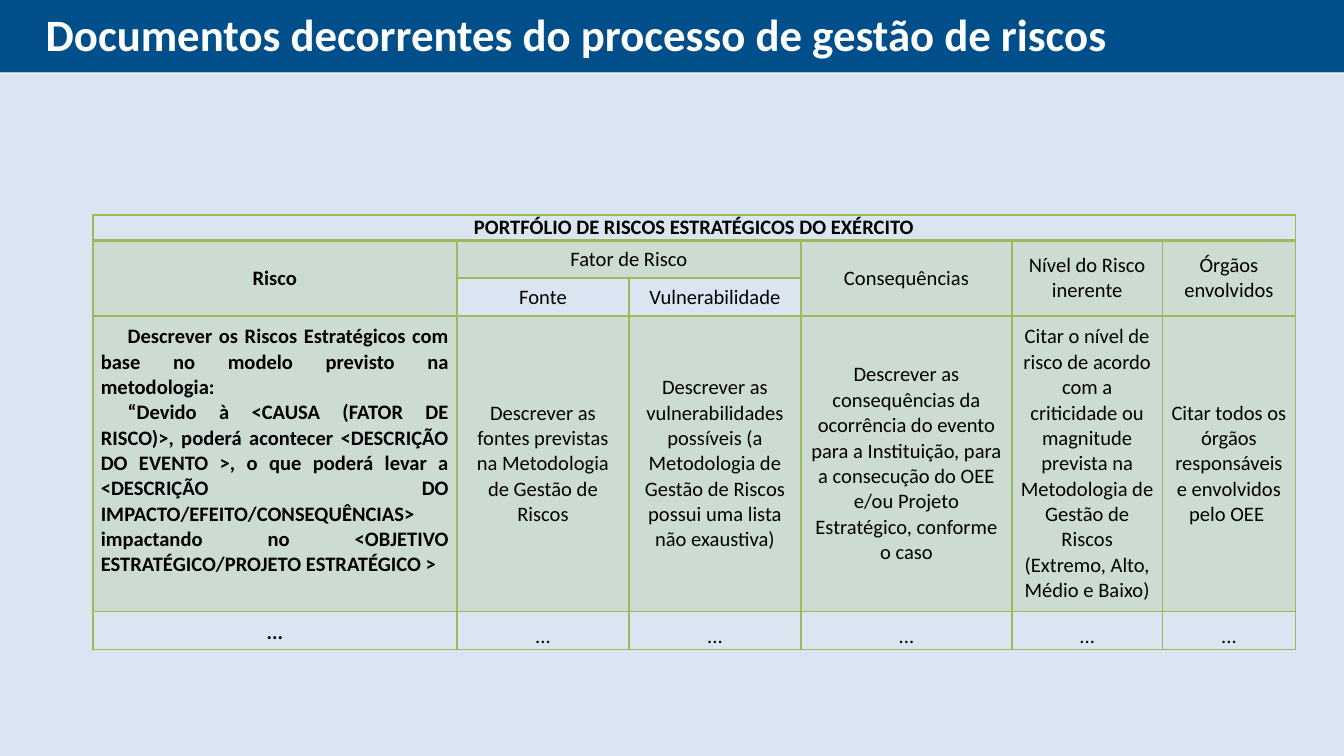
"""Build the slide with the strategic risk portfolio table."""
from dataclasses import dataclass

from pptx import Presentation
from pptx.dml.color import RGBColor
from pptx.enum.shapes import MSO_SHAPE
from pptx.enum.text import MSO_ANCHOR, MSO_AUTO_SIZE, PP_ALIGN
from pptx.oxml import parse_xml
from pptx.oxml.ns import nsdecls, qn
from pptx.util import Inches, Pt

NAVY = RGBColor(0x00, 0x4F, 0x8A)
PALE = RGBColor(0xDA, 0xE5, 0xF1)
GREEN = RGBColor(0x9B, 0xBB, 0x59)
WHITE = RGBColor(0xFF, 0xFF, 0xFF)
BLACK = RGBColor(0x00, 0x00, 0x00)
FONT = "Calibri"
WIDTH = 10
HEIGHT = WIDTH * 9 / 16
PALE_TOP = 0.55
COLS = (2.71, 1.28, 1.28, 1.57, 1.12, 0.99)
ROWS = (0.19, 0.28, 0.28, 2.2, 0.28)


@dataclass(frozen=True)
class Entry:
    row: int
    col: int
    text: str
    rows: int = 1
    cols: int = 1
    tinted: bool = True
    bold: bool = False
    align: PP_ALIGN = PP_ALIGN.CENTER
    spacing: float = 1.0
    indent: float = 0
    bottom: float = 0
    anchor: MSO_ANCHOR = MSO_ANCHOR.MIDDLE


DESCRIPTIONS = (
    "Descrever as fontes previstas na Metodologia de Gestão de Riscos",
    "Descrever as vulnerabilidades possíveis (a Metodologia de Gestão de Riscos "
    "possui uma lista não exaustiva)",
    "Descrever as consequências da ocorrência do evento para a Instituição, para a "
    "consecução do OEE e/ou Projeto Estratégico, conforme o caso",
    "Citar o nível de risco de acordo com a criticidade ou magnitude prevista na "
    "Metodologia de Gestão de Riscos (Extremo, Alto, Médio e Baixo)",
    "Citar todos os órgãos responsáveis e envolvidos pelo OEE ",
)
RISK = (
    "Descrever os Riscos Estratégicos com base no modelo previsto na metodologia: \n"
    "“Devido à <CAUSA (FATOR DE RISCO)>, poderá acontecer <DESCRIÇÃO DO EVENTO >, "
    "o que poderá levar a <DESCRIÇÃO DO IMPACTO/EFEITO/CONSEQUÊNCIAS> impactando no "
    "<OBJETIVO ESTRATÉGICO/PROJETO ESTRATÉGICO >"
)
ENTRIES = [
    Entry(0, 0, "PORTFÓLIO DE RISCOS ESTRATÉGICOS DO EXÉRCITO", cols=6,
          tinted=False, bold=True, anchor=MSO_ANCHOR.TOP),
    Entry(1, 0, "Risco", rows=2, bold=True),
    Entry(1, 1, "Fator de Risco", cols=2),
    Entry(1, 3, "Consequências", rows=2),
    Entry(1, 4, "Nível do Risco inerente", rows=2),
    Entry(1, 5, "Órgãos envolvidos", rows=2),
    Entry(2, 1, "Fonte", tinted=False),
    Entry(2, 2, "Vulnerabilidade", tinted=False),
    Entry(3, 0, RISK, bold=True, align=PP_ALIGN.JUSTIFY, indent=0.2, bottom=0.19),
    *(Entry(3, c, text) for c, text in enumerate(DESCRIPTIONS, 1)),
    Entry(4, 0, "...", tinted=False, bold=True, spacing=1.15),
    *(Entry(4, c, "...", tinted=False, spacing=1.5) for c in range(1, len(COLS))),
]


def write(tf, text: str, *, size: float, color: RGBColor, bold: bool = False,
          align: PP_ALIGN = PP_ALIGN.LEFT, spacing: float = 1.0,
          indent: float = 0) -> None:
    for i, line in enumerate(text.split("\n")):
        p = tf.add_paragraph() if i else tf.paragraphs[0]
        p.alignment, p.line_spacing = align, spacing
        p.space_before = Pt(0)
        if indent:
            p._p.get_or_add_pPr().set("indent", str(Inches(indent)))
        r = p.add_run()
        r.text = line
        r.font.name, r.font.size, r.font.bold = FONT, Pt(size), bold
        r.font.color.rgb = color


def add_band(s, top: float, height: float, color: RGBColor) -> None:
    sp = s.shapes.add_shape(MSO_SHAPE.RECTANGLE, 0, Inches(top),
                            Inches(WIDTH), Inches(height))
    sp.shadow.inherit = False
    sp.fill.solid()
    sp.fill.fore_color.rgb = color
    sp.line.fill.background()


def set_borders(cell, **widths: float) -> None:
    tc_pr = cell._tc.get_or_add_tcPr()
    for i, side in enumerate("LRTB"):
        tc_pr.insert(i, parse_xml(
            f'<a:ln{side} {nsdecls("a")} w="{Pt(widths.get(side, 1))}">'
            f'<a:solidFill><a:srgbClr val="{GREEN}"/></a:solidFill></a:ln{side}>'))


def fill_cell(table, e: Entry) -> None:
    cell = table.cell(e.row, e.col)
    if e.rows * e.cols > 1:
        cell.merge(table.cell(e.row + e.rows - 1, e.col + e.cols - 1))
    cell.vertical_anchor = e.anchor
    if e.tinted:
        cell.fill.solid()
        cell.fill.fore_color.rgb = GREEN
        color = cell._tc.tcPr.find(qn("a:solidFill")).find(qn("a:srgbClr"))
        color.append(parse_xml(f'<a:alpha {nsdecls("a")} val="20000"/>'))
    cell.margin_bottom = Inches(e.bottom)
    write(cell.text_frame, e.text, size=11, color=BLACK, bold=e.bold,
          align=e.align, spacing=e.spacing, indent=e.indent)


def add_portfolio(s) -> None:
    frame = s.shapes.add_table(len(ROWS), len(COLS), Inches(0.69), Inches(1.6),
                               Inches(sum(COLS)), Inches(sum(ROWS)))
    table = frame.table
    table.first_row = table.horz_banding = False
    for col, width in zip(table.columns, COLS):
        col.width = Inches(width)
    for i, (row, height) in enumerate(zip(table.rows, ROWS)):
        row.height = Inches(height)
        for cell in row.cells:
            cell.margin_left = cell.margin_right = Inches(0.06)
            cell.margin_top = cell.margin_bottom = 0
            cell.fill.background()
            set_borders(cell, B=2 if i == 0 else 1, T=2 if i == 1 else 1)
    for entry in ENTRIES:
        fill_cell(table, entry)


def add_title(s, text: str) -> None:
    title = s.shapes.title
    title.left, title.top = Inches(0.24), Inches(0)
    title.width, title.height = Inches(8.44), Inches(0.51)
    title.element.getparent().append(title.element)
    tf = title.text_frame
    tf.word_wrap, tf.auto_size = True, MSO_AUTO_SIZE.NONE
    tf.vertical_anchor = MSO_ANCHOR.TOP
    write(tf, text, size=24, color=WHITE, bold=True)


def main() -> None:
    prs = Presentation()
    prs.slide_width, prs.slide_height = Inches(WIDTH), Inches(HEIGHT)
    s = prs.slides.add_slide(prs.slide_layouts[5])
    add_band(s, 0, 0.54, NAVY)
    add_band(s, PALE_TOP, HEIGHT - PALE_TOP, PALE)
    add_title(s, "Documentos decorrentes do processo de gestão de riscos")
    add_portfolio(s)
    prs.save("out.pptx")


if __name__ == "__main__":
    main()
